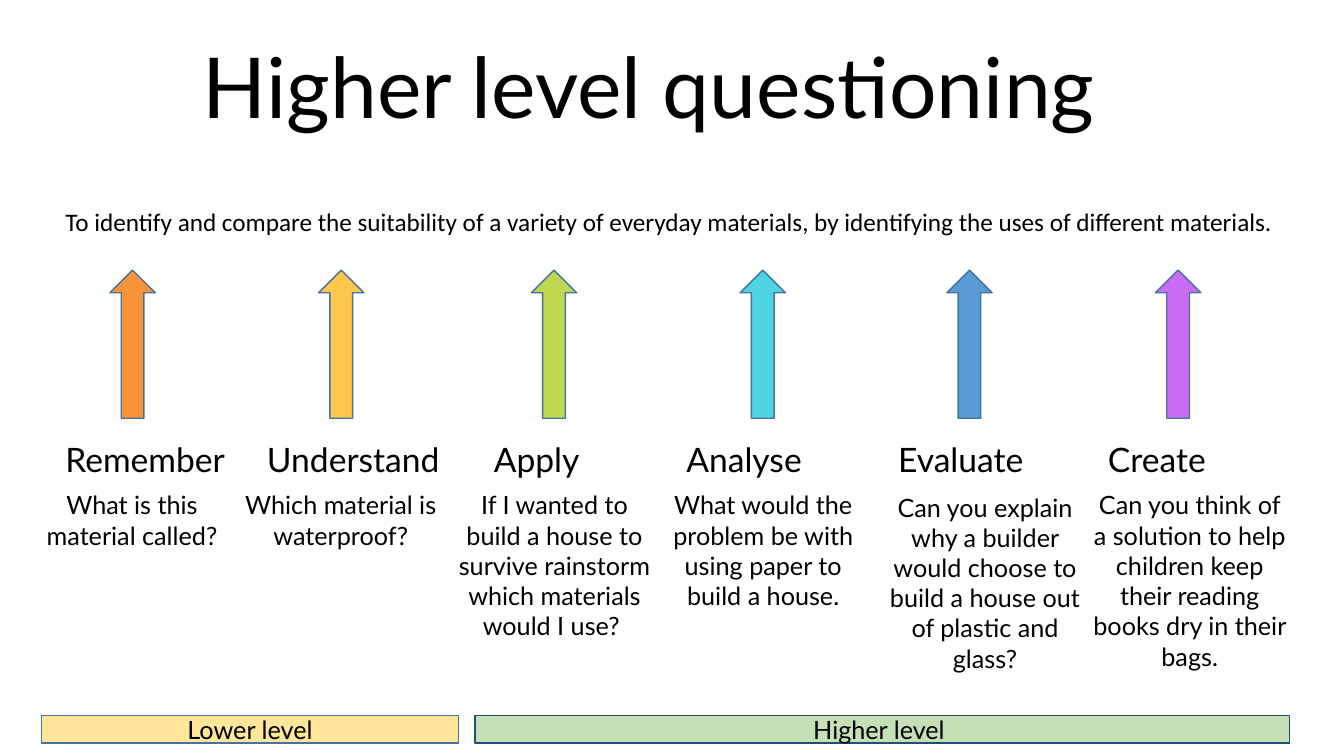
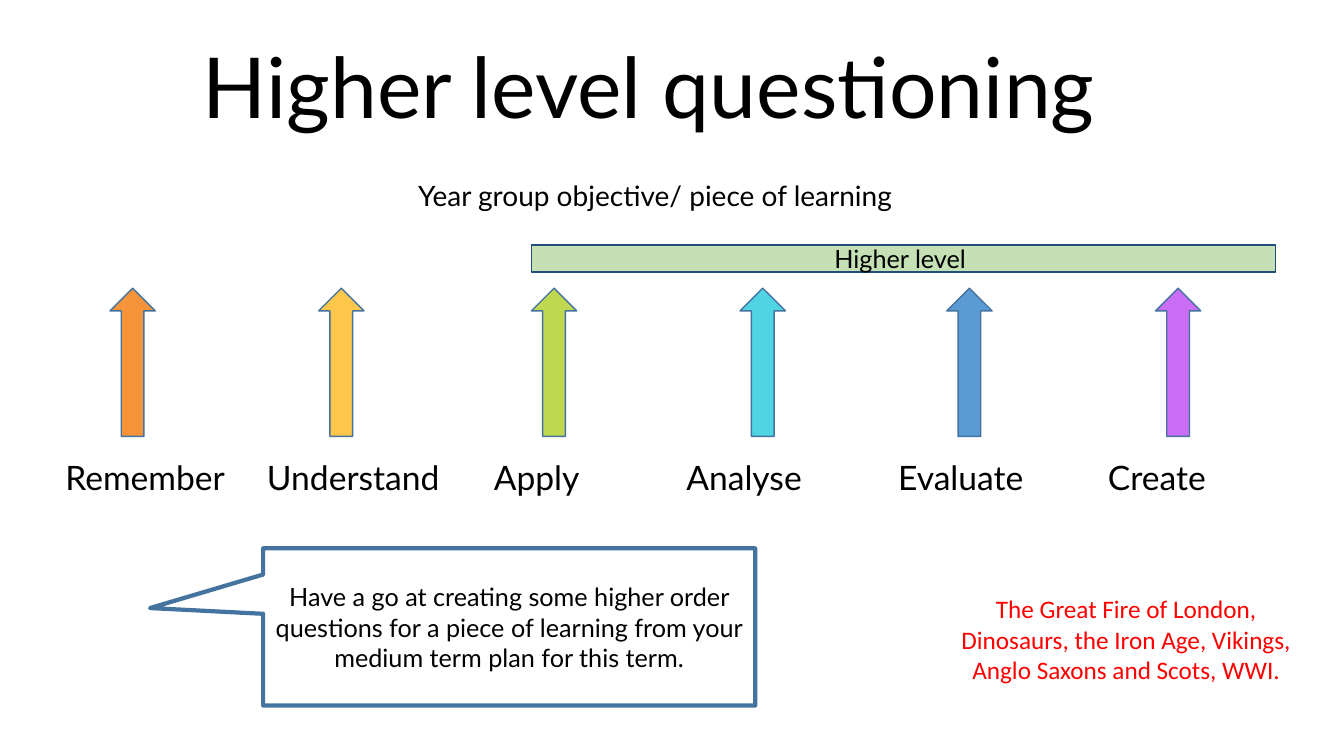
from dataclasses import dataclass
from pptx import Presentation
from pptx.dml.color import RGBColor
from pptx.enum.shapes import MSO_SHAPE
from pptx.enum.text import MSO_ANCHOR, PP_ALIGN
from pptx.util import Inches, Pt


@dataclass(frozen=True)
class Theme:
    font: str = "Lato"
    alt_font: str = "Calibri"
    text: str = "000000"
    accent: str = "FF0000"
    outline: str = "43739E"
    dark_outline: str = "1F4E79"
    lower: str = "FFE699"
    higher: str = "C5E0B4"
    title: int = 60
    label: int = 24
    objective: int = 20
    body: int = 18


T = Theme()

# Level name, arrow colour, arrow left, label left
LEVELS = [
    ("Remember", "F79439", 1.09, 0.55),
    ("Understand", "FEC74B", 3.16, 2.55),
    ("Apply", "BFD850", 5.27, 4.8),
    ("Analyse", "4ED4E2", 7.34, 6.71),
    ("Evaluate", "5B9BD5", 9.39, 8.81),
    ("Create", "CA6CF4", 11.46, 10.89),
]

# Question, left, top, height
QUESTIONS = [
    ("What is this material called?", 0.23, 4.81, 0.71),
    ("Which material is waterproof?", 2.3, 4.81, 0.71),
    ("If I wanted to build a house to survive rainstorm which materials "
     "would I use? ", 4.42, 4.81, 1.62),
    ("What would the problem be with using paper to build a house.",
     6.49, 4.81, 1.31),
    ("Can you explain why a builder would choose to build a house out of "
     "plastic and glass?", 8.69, 4.83, 1.92),
    ("Can you think of a solution to help children keep their reading books "
     "dry in their bags.", 10.72, 4.81, 1.92),
]


def add_text(s, box, text, size=T.body, font=T.font, color=T.text,
             align=PP_ALIGN.CENTER, sp=None):
    """Write text into sp, or into a new text box placed at box."""
    sp = sp or s.shapes.add_textbox(*map(Inches, box))
    tf = sp.text_frame
    tf.word_wrap = True
    p = tf.paragraphs[0]
    p.alignment = align
    r = p.add_run()
    r.text = text
    r.font.name, r.font.size = font, Pt(size)
    r.font.color.rgb = RGBColor.from_string(color)
    return tf


def add_shape(s, kind, box, fill=None, line=T.outline, width=1, text=None):
    sp = s.shapes.add_shape(kind, *map(Inches, box))
    sp.shadow.inherit = False
    if fill:
        sp.fill.solid()
        sp.fill.fore_color.rgb = RGBColor.from_string(fill)
    else:
        sp.fill.background()
    sp.line.color.rgb = RGBColor.from_string(line)
    sp.line.width = Pt(width)
    if text:
        tf = add_text(s, box, text, sp=sp)
        tf.vertical_anchor = MSO_ANCHOR.MIDDLE
    return sp


prs = Presentation()
prs.slide_width, prs.slide_height = Inches(13.33), Inches(7.5)

# Shared parts: title, arrows and level names
slides = []
for arrow_top, label_top in [(2.68, 4.31), (2.86, 4.48)]:
    s = prs.slides.add_slide(prs.slide_layouts[6])
    slides.append(s)
    tf = add_text(s, (1.54, 0.08, 10, 1.32), "Higher level questioning ",
                  T.title)
    tf.vertical_anchor = MSO_ANCHOR.BOTTOM
    tf.paragraphs[0].line_spacing = 0.9
    for name, color, arrow_left, label_left in LEVELS:
        add_shape(s, MSO_SHAPE.UP_ARROW, (arrow_left, arrow_top, 0.45, 1.47),
                  color)
        add_text(s, (label_left, label_top, 2.2, 0.5), name, T.label,
                 align=PP_ALIGN.LEFT)

worked, task = slides

# Slide 1: worked example
add_text(worked, (0.55, 2, 12.33, 0.4),
         "To identify and compare the suitability of a variety of everyday "
         "materials, by identifying the uses of different materials.",
         font=T.alt_font, align=PP_ALIGN.LEFT)
for question, left, top, height in QUESTIONS:
    add_text(worked, (left, top, 2.16, height), question)
add_shape(worked, MSO_SHAPE.RECTANGLE, (0.41, 7.1, 4.14, 0.27), T.lower,
          text="Lower level")

# Higher level bands
for s, box in [(worked, (4.71, 7.1, 8.08, 0.27)),
               (task, (5.27, 2.43, 7.38, 0.27))]:
    add_shape(s, MSO_SHAPE.RECTANGLE, box, T.higher, T.dark_outline,
              text="Higher level ")

# Slide 2: task
add_text(task, (0.55, 1.72, 11.97, 0.74),
         "Year group objective/ piece of learning ", T.objective)
callout = add_shape(
    task, MSO_SHAPE.RECTANGULAR_CALLOUT, (2.61, 5.44, 4.88, 1.56), width=3,
    text="Have a go at creating some higher order questions for a piece of "
         "learning from your medium term plan for this term.")
callout.adjustments[0], callout.adjustments[1] = -0.73, -0.12
add_text(task, (9.39, 5.84, 3.56, 1.31),
         "The Great Fire of London, Dinosaurs, the Iron Age, Vikings, "
         "Anglo Saxons and Scots, WWI.", font=T.alt_font, color=T.accent)

prs.save("out.pptx")
